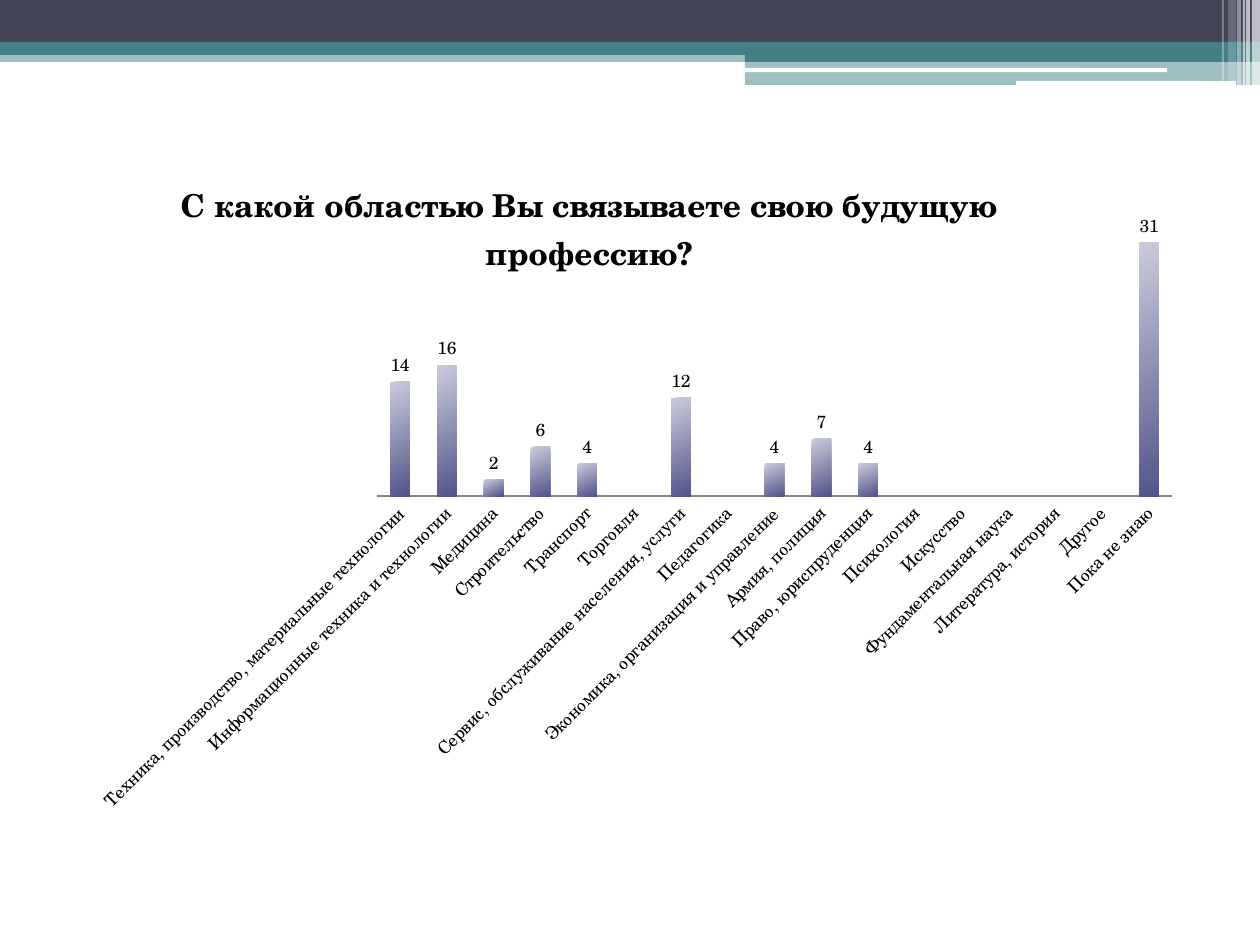
from dataclasses import dataclass

from lxml.etree import SubElement
from pptx import Presentation
from pptx.chart.data import CategoryChartData
from pptx.dml.color import RGBColor
from pptx.enum.chart import XL_CHART_TYPE as ChartType
from pptx.enum.chart import XL_LABEL_POSITION as LabelPosition
from pptx.enum.chart import XL_TICK_MARK as TickMark
from pptx.enum.shapes import MSO_SHAPE as Shape
from pptx.oxml import parse_xml
from pptx.oxml.ns import nsdecls, qn
from pptx.util import Pt

PX = 914400 // 126


@dataclass(frozen=True)
class Theme:
    font: str = "TeX Gyre Schola"
    ink: str = "000000"
    white: str = "FFFFFF"
    slate: str = "424456"
    teal: str = "438086"
    bar_light: str = "CBCBDC"
    bar_dark: str = "53548A"
    axis: str = "868686"
    title_size: int = 18
    label_size: int = 10


THEME = Theme()

TITLE = "С какой областью Вы связываете свою будущую профессию?"
ANSWERS = {
    "Техника, производство, материальные технологии": 14,
    "Информационные техника и технологии": 16,
    "Медицина": 2,
    "Строительство": 6,
    "Транспорт": 4,
    "Торговля": None,
    "Сервис, обслуживание населения, услуги": 12,
    "Педагогика": None,
    "Экономика, организация и управление": 4,
    "Армия, полиция": 7,
    "Право, юриспруденция": 4,
    "Психология": None,
    "Искусство": None,
    "Фундаментальная наука": None,
    "Литература, история": None,
    "Другое": None,
    "Пока не знаю": 31,
}

BANDS = [
    (0, 50, 1260, 12, THEME.teal, 50),
    (0, 0, 1260, 43, THEME.slate, 100),
    (0, 42, 1260, 13, THEME.teal, 100),
    (745, 49, 515, 13, THEME.teal, 100),
    (745, 62, 515, 23, THEME.teal, 50),
]
RULES = [(745, 68, 422, 4), (1016, 81, 220, 5)]
STRIPES = [
    (1252, 8, 85, 65),
    (1246, 4, 85, 65),
    (1243, 2, 85, 60),
    (1237, 4, 85, 40),
    (1228, 8, 81, 20),
    (1222, 2, 81, 30),
]


def rgb(value):
    return RGBColor.from_string(value)


def add_block(slide, left, top, width, height, color, opacity=100,
              kind=Shape.RECTANGLE):
    block = slide.shapes.add_shape(
        kind, left * PX, top * PX, width * PX, height * PX)
    block.shadow.inherit = False
    block.line.fill.background()
    block.fill.solid()
    block.fill.fore_color.rgb = rgb(color)
    if opacity < 100:
        tint = block.fill._xPr.find(qn("a:solidFill"))[0]
        SubElement(tint, qn("a:alpha"), val=str(opacity * 1000))


def add_header(slide):
    for band in BANDS:
        add_block(slide, *band)
    for rule in RULES:
        add_block(slide, *rule, THEME.white, kind=Shape.ROUNDED_RECTANGLE)
    for left, width, height, opacity in STRIPES:
        add_block(slide, left, 0, width, height, THEME.white, opacity)


def set_font(font, size, bold=False):
    font.name = THEME.font
    font.size = Pt(size)
    font.bold = bold
    font.color.rgb = rgb(THEME.ink)


def place(element, successors, **fractions):
    for old in element.findall(qn("c:layout")):
        element.remove(old)
    target = '<c:layoutTarget val="inner"/>' if "w" in fractions else ""
    modes = "".join(f'<c:{side}Mode val="edge"/>' for side in "xy")
    sizes = "".join(f'<c:{side} val="{value}"/>'
                    for side, value in fractions.items())
    layout = parse_xml(
        f'<c:layout {nsdecls("c")}><c:manualLayout>{target}{modes}{sizes}'
        "</c:manualLayout></c:layout>")
    element.insert_element_before(layout, *successors)


def add_title(chart):
    title = chart.chart_title
    title.text_frame.text = TITLE
    set_font(title.text_frame.paragraphs[0].font, THEME.title_size, True)
    title.include_in_layout = False
    overlay = title._element.find(qn("c:overlay"))
    if overlay is None:
        overlay = parse_xml(f'<c:overlay {nsdecls("c")}/>')
        title._element.insert_element_before(
            overlay, "c:spPr", "c:txPr", "c:extLst")
    overlay.set("val", "1")
    place(title._element, ("c:overlay", "c:spPr", "c:txPr"), x=0.09, y=0.15)


def style_axes(chart):
    values = chart.value_axis
    values.minimum_scale, values.maximum_scale = 0, 35
    values.has_major_gridlines = False
    values.visible = False
    fields = chart.category_axis
    fields.major_tick_mark = fields.minor_tick_mark = TickMark.NONE
    fields.format.line.color.rgb = rgb(THEME.axis)
    fields.format.line.width = Pt(0.75)
    set_font(fields.tick_labels.font, THEME.label_size)
    text_body = fields._element.find(qn("c:txPr")).find(qn("a:bodyPr"))
    text_body.set("rot", "-2700000")
    text_body.set("vert", "horz")


def style_bars(plot):
    plot.gap_width = 140
    plot.vary_by_categories = False
    fill = plot.series[0].format.fill
    fill.gradient()
    fill.gradient_angle = 295
    for stop, color in zip(fill.gradient_stops,
                           (THEME.bar_light, THEME.bar_dark)):
        stop.color.rgb = rgb(color)
    plot.has_data_labels = True
    labels = plot.data_labels
    labels.show_value = True
    labels.position = LabelPosition.OUTSIDE_END
    set_font(labels.font, THEME.label_size)


def add_answers_chart(slide, left, top, width, height):
    answers = CategoryChartData()
    answers.categories = list(ANSWERS)
    answers.add_series("Series 1", ANSWERS.values())
    chart = slide.shapes.add_chart(
        ChartType.COLUMN_CLUSTERED, left * PX, top * PX,
        width * PX, height * PX, answers).chart
    chart.has_legend = False
    set_font(chart.font, THEME.label_size)
    add_title(chart)
    style_axes(chart)
    style_bars(chart.plots[0])
    plot_area = chart._chartSpace.chart.plotArea
    place(plot_area, ("c:barChart",), x=0.27, y=0.2, w=0.71, h=0.37)


def main():
    deck = Presentation()
    deck.slide_width, deck.slide_height = 1260 * PX, 945 * PX
    slide = deck.slides.add_slide(deck.slide_layouts[6])
    add_header(slide)
    add_answers_chart(slide, 74, 55, 1121, 774)
    deck.save("out.pptx")


if __name__ == "__main__":
    main()
